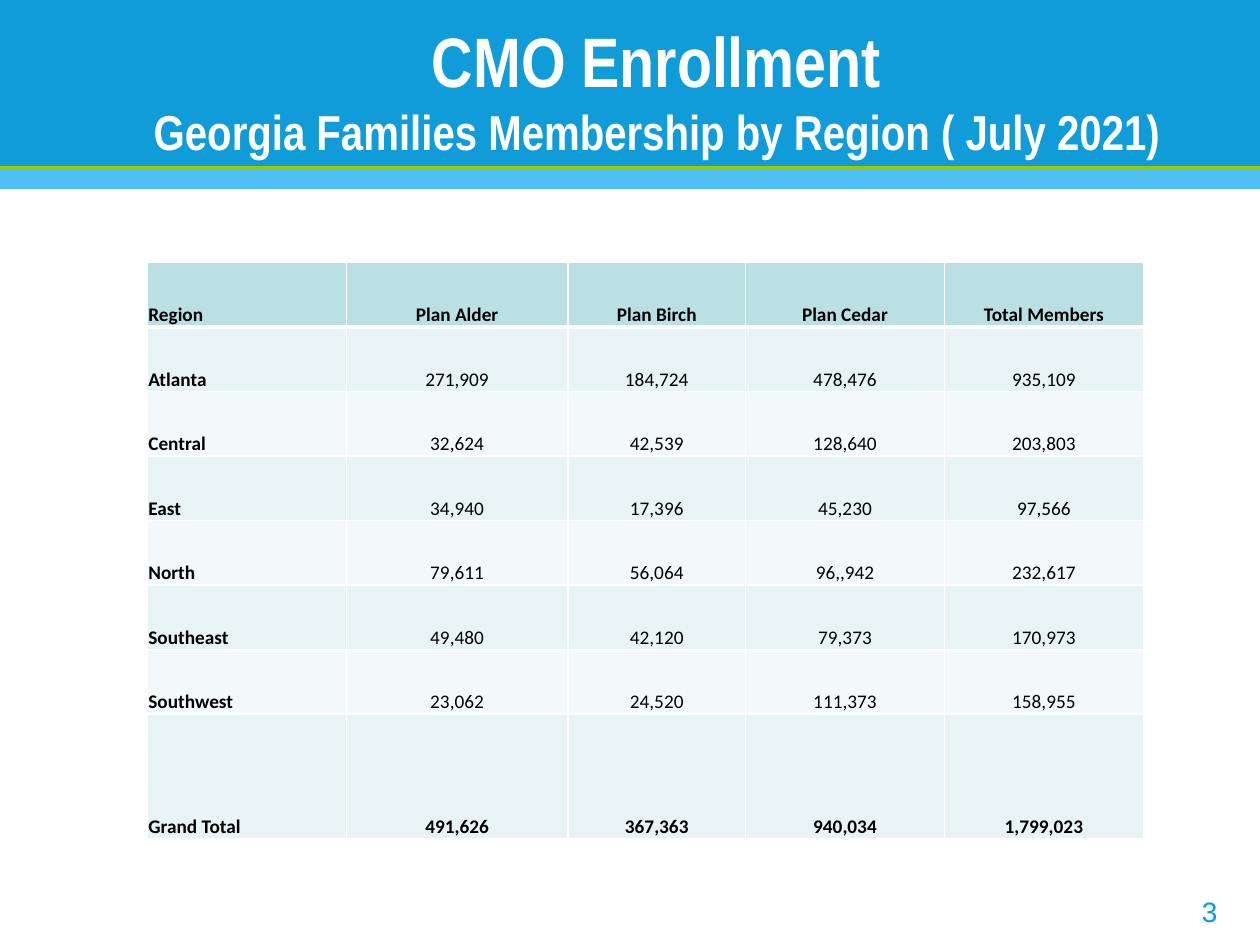
from lxml import etree
from pptx import Presentation
from pptx.dml.color import RGBColor
from pptx.enum.shapes import MSO_CONNECTOR, MSO_SHAPE
from pptx.enum.text import MSO_ANCHOR, MSO_AUTO_SIZE, PP_ALIGN
from pptx.oxml.ns import qn
from pptx.util import Cm, Pt

RECT = MSO_SHAPE.RECTANGLE
LINE = MSO_CONNECTOR.STRAIGHT
MIDDLE, BOTTOM = MSO_ANCHOR.MIDDLE, MSO_ANCHOR.BOTTOM
LEFT, CENTER = PP_ALIGN.LEFT, PP_ALIGN.CENTER
NO_FIT = MSO_AUTO_SIZE.NONE

COLORS = {
    "band": "0F9CD8", "strip": "4FC0F3", "rule": "99CC00",
    "page": "0099FF", "white": "FFFFFF", "black": "000000",
    "head": "BBE0E3", "odd": "E7F3F4", "even": "F3F9FA",
}
WIDE = 25.4
COLS = [4.01, 4.47, 3.58, 4.01, 4.01]
ROWS = [1.3] * 7 + [2.51]
DATA = [
    ["Region", "Plan Alder", "Plan Birch", "Plan Cedar", "Total Members"],
    ["Atlanta", "271,909", "184,724", "478,476", "935,109"],
    ["Central", "32,624", "42,539", "128,640", "203,803"],
    ["East", "34,940", "17,396", "45,230", "97,566"],
    ["North", "79,611", "56,064", "96,,942", "232,617"],
    ["Southeast", "49,480", "42,120", "79,373", "170,973"],
    ["Southwest", "23,062", "24,520", "111,373", "158,955"],
    ["Grand Total", "491,626", "367,363", "940,034", "1,799,023"],
]


def tint(name):
    """Return the named colour."""
    return RGBColor.from_string(COLORS[name])


def add_run(para, text, font, size, color, bold=False):
    """Add one formatted run to a paragraph."""
    run = para.add_run()
    run.text = text
    run.font.name = font
    run.font.size = Pt(size)
    run.font.bold = bold
    run.font.color.rgb = tint(color)


def add_band(slide, top, height, color):
    """Add a plain band across the slide."""
    band = slide.shapes.add_shape(RECT, 0, Cm(top), Cm(WIDE), Cm(height))
    band.shadow.inherit = False
    band.fill.solid()
    band.fill.fore_color.rgb = tint(color)
    band.line.fill.background()


def add_rule(slide, top):
    """Add a thin line across the slide."""
    rule = slide.shapes.add_connector(LINE, 0, Cm(top), Cm(WIDE), Cm(top))
    rule.line.color.rgb = tint("rule")
    rule.line.width = Pt(1.5)
    etree.SubElement(rule._element.spPr, qn("a:effectLst"))


def set_title(slide):
    """Place the title in front of the bands and fill it."""
    title = slide.shapes.title
    slide.shapes._spTree.append(title._element)
    title.left, title.top = Cm(1.27), Cm(0.43)
    title.width, title.height = Cm(23.93), Cm(2.74)
    frame = title.text_frame
    frame.auto_size = NO_FIT
    frame.vertical_anchor = MIDDLE
    para = frame.paragraphs[0]
    para.alignment = CENTER
    add_run(para, "CMO Enrollment", "Arial Narrow", 40, "white", True)
    para.add_line_break()
    add_run(para, "Georgia Families Membership by Region ( July 2021)",
            "Arial Narrow", 28, "white", True)


def add_page(slide):
    """Add the page number."""
    box = slide.shapes.add_textbox(Cm(23.98), Cm(17.91), Cm(1.19), Cm(0.94))
    box.text_frame.word_wrap = False
    add_run(box.text_frame.paragraphs[0], "3", "Arial", 16, "page")


def set_edges(cell, top, bottom):
    """Draw white cell borders with the given top and bottom widths."""
    props = cell._tc.get_or_add_tcPr()
    edges = {"lnL": 1, "lnR": 1, "lnT": top, "lnB": bottom}
    for spot, (tag, width) in enumerate(edges.items()):
        edge = etree.Element(qn("a:" + tag), w=str(Pt(width)))
        fill = etree.SubElement(edge, qn("a:solidFill"))
        etree.SubElement(fill, qn("a:srgbClr"), val=COLORS["white"])
        props.insert(spot, edge)


def fill_cell(cell, text, row, col):
    """Write and format one table cell."""
    cell.margin_left = cell.margin_right = cell.margin_top = Cm(0.02)
    cell.margin_bottom = 0
    cell.vertical_anchor = BOTTOM
    para = cell.text_frame.paragraphs[0]
    para.alignment = CENTER if col else LEFT
    bold = col == 0 or row in (0, len(DATA) - 1)
    add_run(para, text, "Calibri", 11, "black", bold)
    cell.fill.solid()
    shade = "head" if row == 0 else "odd" if row % 2 else "even"
    cell.fill.fore_color.rgb = tint(shade)
    set_edges(cell, 3 if row == 1 else 1, 3 if row == 0 else 1)


def add_grid(slide):
    """Add the membership table."""
    table = slide.shapes.add_table(
        len(ROWS), len(COLS), Cm(2.97), Cm(5.29),
        Cm(sum(COLS)), Cm(sum(ROWS))).table
    for col, width in zip(table.columns, COLS):
        col.width = Cm(width)
    for row, height in zip(table.rows, ROWS):
        row.height = Cm(height)
    for r, line in enumerate(DATA):
        for c, text in enumerate(line):
            fill_cell(table.cell(r, c), text, r, c)


def main():
    """Build and save the slide."""
    deck = Presentation()
    deck.slide_width, deck.slide_height = Cm(WIDE), Cm(19.05)
    slide = deck.slides.add_slide(deck.slide_layouts[5])
    add_band(slide, 0, 3.38, "band")
    add_band(slide, 3.38, 0.43, "strip")
    add_rule(slide, 3.38)
    add_page(slide)
    set_title(slide)
    add_grid(slide)
    deck.save("out.pptx")


if __name__ == "__main__":
    main()
